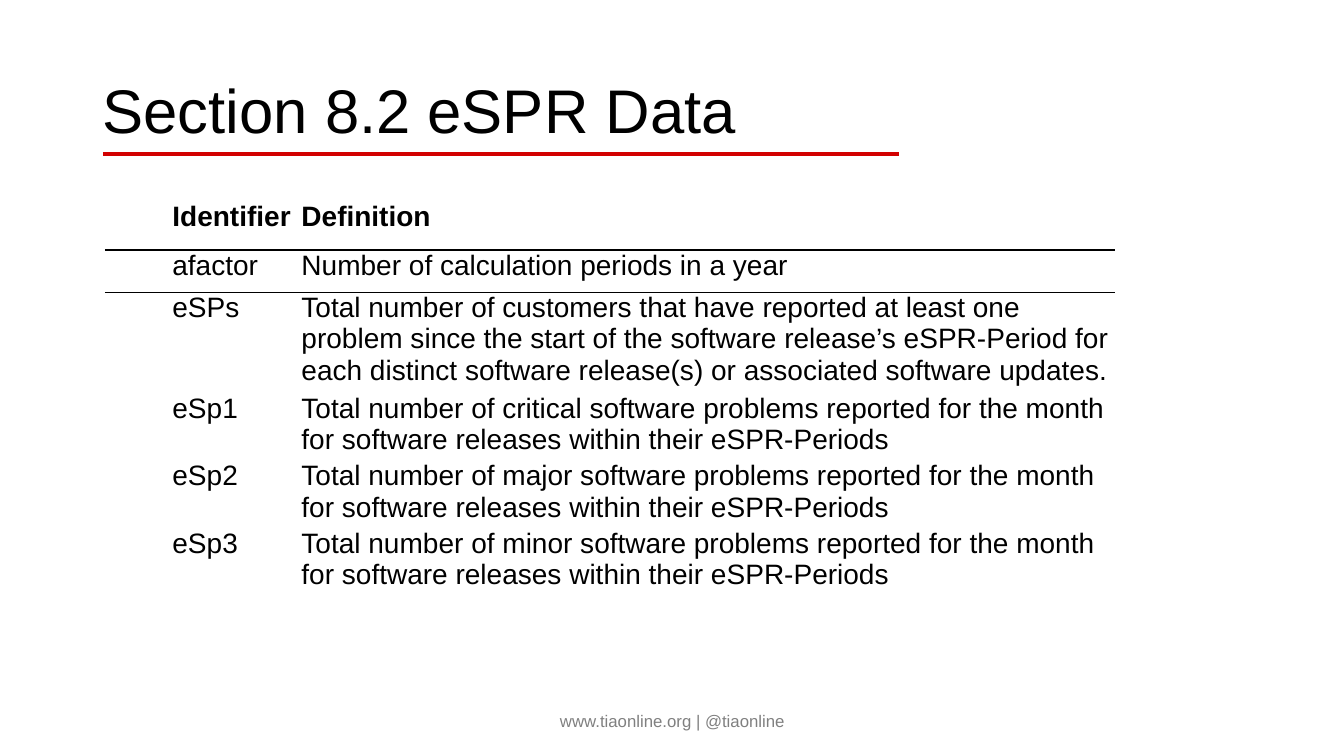
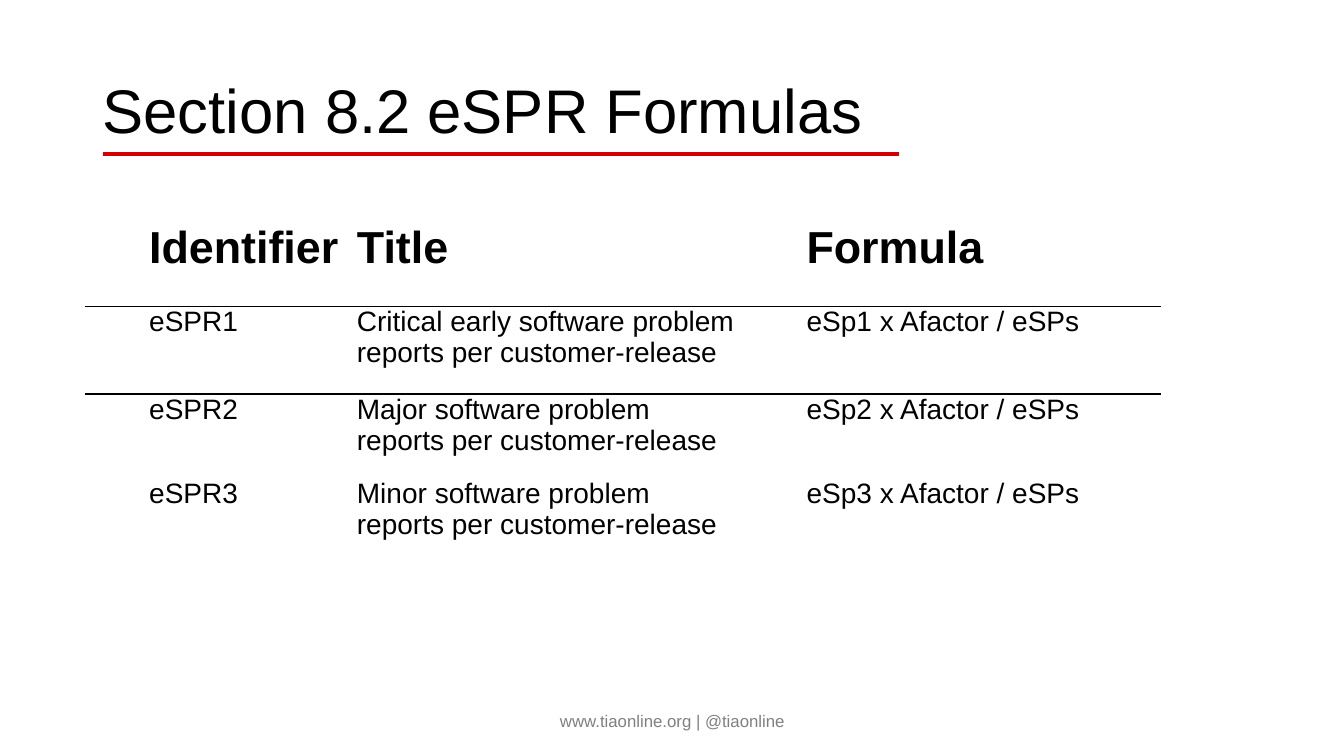
from pptx import Presentation, util as u
from pptx.dml.color import RGBColor
from pptx.enum import shapes, text
from pptx.oxml import ns, xmlchemy

BLACK = RGBColor(0x00, 0x00, 0x00)
RED = RGBColor(0xD2, 0x00, 0x00)
GRAY = RGBColor(0x80, 0x80, 0x80)
FONT = "Arial"
PLAIN_TABLE = "{2D5ABB26-0587-4C30-8999-92F81FD0307C}"
FOOTER = "www.tiaonline.org | @tiaonline"


def write(frame, content, size=20, color=BLACK, bold=False, align=None,
          spacing=None, indent=0):
    frame.word_wrap = True
    for index, line in enumerate(content.split("\n")):
        paragraph = frame.add_paragraph() if index else frame.paragraphs[0]
        if indent:
            paragraph._p.get_or_add_pPr().set("marL", str(u.Inches(indent)))
        paragraph.alignment = align
        paragraph.line_spacing = spacing
        run = paragraph.add_run()
        run.text = line
        run.font.name = FONT
        run.font.size = u.Pt(size)
        run.font.bold = bold
        run.font.color.rgb = color


def add_border(cell, side):
    properties = cell._tc.get_or_add_tcPr()
    border = xmlchemy.OxmlElement(f"a:ln{side}")
    border.set("w", str(u.Pt(1)))
    fill = xmlchemy.OxmlElement("a:solidFill")
    color = xmlchemy.OxmlElement("a:srgbClr")
    color.set("val", str(BLACK))
    fill.append(color)
    border.append(fill)
    properties.insert(0, border)


class Deck:
    def __init__(self):
        self.presentation = Presentation()
        self.presentation.slide_width = u.Inches(13.33)
        self.presentation.slide_height = u.Inches(7.5)
        self.slide = None

    def start_slide(self, title):
        layout = self.presentation.slide_layouts[6]
        self.slide = self.presentation.slides.add_slide(layout)
        self.rule(1.02, 1.53, 8.92)
        self.label(title, 0.92, 0.4, 11.5, 1.45, size=44, spacing=0.9)
        self.label(FOOTER, 4.42, 6.95, 4.5, 0.4, size=12, color=GRAY,
                   align=text.PP_ALIGN.CENTER)

    def rule(self, left, top, right):
        underline = self.slide.shapes.add_connector(
            shapes.MSO_CONNECTOR.STRAIGHT, u.Inches(left), u.Inches(top),
            u.Inches(right), u.Inches(top))
        underline.line.color.rgb = RED
        underline.line.width = u.Pt(3)
        underline._element.spPr.append(xmlchemy.OxmlElement("a:effectLst"))

    def label(self, content, left, top, width, height, **style):
        box = self.slide.shapes.add_textbox(
            u.Inches(left), u.Inches(top), u.Inches(width), u.Inches(height))
        box.text_frame.vertical_anchor = text.MSO_ANCHOR.MIDDLE
        write(box.text_frame, content, **style)

    def table(self, rows, left, top, widths, heights, indents, header_size):
        frame = self.slide.shapes.add_table(
            len(rows), len(widths), u.Inches(left), u.Inches(top),
            u.Inches(sum(widths)), u.Inches(sum(heights)))
        next(frame._element.iter(ns.qn("a:tableStyleId"))).text = PLAIN_TABLE
        grid = frame.table
        grid.horz_banding = False
        for column, width in zip(grid.columns, widths):
            column.width = u.Inches(width)
        for row, height in zip(grid.rows, heights):
            row.height = u.Inches(height)
        for r, entries in enumerate(rows):
            for c, entry in enumerate(entries):
                cell = grid.cell(r, c)
                cell.margin_left = cell.margin_right = u.Inches(0.02)
                cell.margin_top = cell.margin_bottom = 0
                cell.fill.background()
                write(cell.text_frame, entry, bold=r == 0, indent=indents[c],
                      size=20 if r else header_size)
                if r < 2:
                    add_border(cell, "T" if r else "B")


def main():
    deck = Deck()

    deck.start_slide("Section 8.2 eSPR Data")
    severities = ["critical", "major", "minor"]
    data = [
        ("Identifier", "Definition"),
        ("afactor", "Number of calculation periods in a year"),
        ("eSPs", "Total number of customers that have reported at least one "
                 "problem since the start of the software release’s "
                 "eSPR-Period for each distinct software release(s) or "
                 "associated software updates."),
    ] + [
        (f"eSp{level}", f"Total number of {severity} software problems "
                        "reported for the month for software releases within "
                        "their eSPR-Periods")
        for level, severity in enumerate(severities, 1)
    ]
    deck.table(data, 1.04, 2, widths=[1.93, 8.09],
               heights=[0.48, 0.42, 0.74, 0.66, 0.67, 0.56],
               indents=[0.65, 0], header_size=20)

    deck.start_slide("Section 8.2 eSPR Formulas")
    titles = [
        "Critical early software problem\nreports per customer-release",
        "Major software problem reports per customer-release",
        "Minor software problem reports per customer-release",
    ]
    formulas = [("Identifier", "Title", "Formula")] + [
        (f"eSPR{level}", title, f"eSp{level} x Afactor / eSPs")
        for level, title in enumerate(titles, 1)
    ]
    deck.table(formulas, 0.84, 2.21, widths=[2.68, 3.84, 4.16],
               heights=[0.83, 0.87, 0.83, 0.83],
               indents=[0.62, 0, 0.62], header_size=32)

    deck.presentation.save("out.pptx")


if __name__ == "__main__":
    main()
